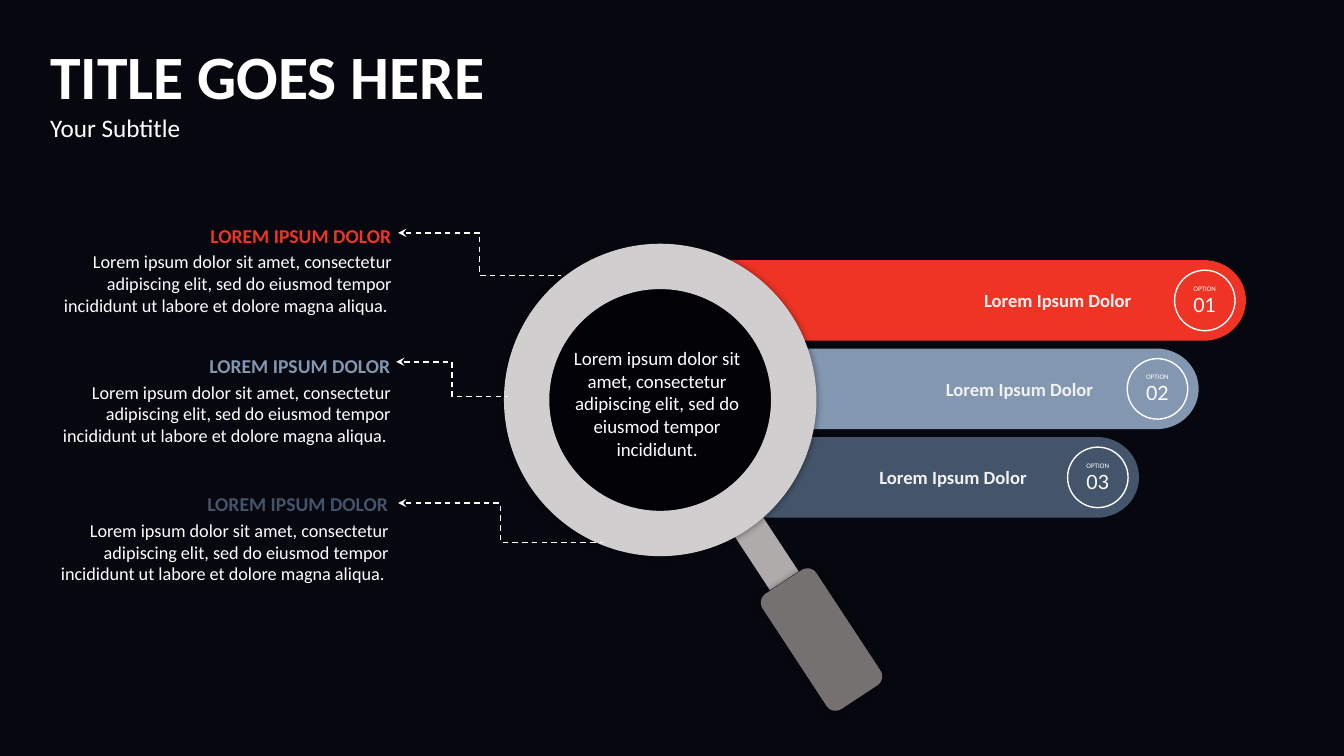
import math
from dataclasses import dataclass

from lxml import etree
from pptx import Presentation
from pptx.dml.color import RGBColor
from pptx.enum.dml import MSO_LINE
from pptx.enum.shapes import MSO_CONNECTOR, MSO_SHAPE
from pptx.enum.text import MSO_ANCHOR, MSO_AUTO_SIZE, PP_ALIGN
from pptx.oxml import parse_xml
from pptx.oxml.ns import nsdecls, qn
from pptx.util import Pt

LEFT, CENTER, RIGHT = PP_ALIGN.LEFT, PP_ALIGN.CENTER, PP_ALIGN.RIGHT
MIDDLE = MSO_ANCHOR.MIDDLE
GROW = MSO_AUTO_SIZE.SHAPE_TO_FIT_TEXT
ELBOW = MSO_CONNECTOR.ELBOW
DASH = MSO_LINE.DASH
OVAL, DONUT = MSO_SHAPE.OVAL, MSO_SHAPE.DONUT
RECTANGLE, ROUNDED = MSO_SHAPE.RECTANGLE, MSO_SHAPE.ROUNDED_RECTANGLE


@dataclass(frozen=True)
class Theme:
    background: str = "07080F"
    white: str = "FFFFFF"
    label: str = "F2F2F2"
    black: str = "000000"
    red: str = "EF3425"
    blue: str = "8397B1"
    navy: str = "44546B"
    ring: str = "D0CECE"
    neck: str = "AFABAB"
    handle: str = "767171"
    font: str = "Calibri"
    number_font: str = "Lato"
    title_size: float = 44
    subtitle_size: float = 18
    heading_size: float = 14
    body_size: float = 13
    lens_size: float = 13.5
    label_size: float = 13.3
    option_size: float = 5
    number_size: float = 14


THEME = Theme()
LENS_X, LENS_Y = 471.6, 285.7
RING_RADIUS, HOLE_RADIUS = 111.6, 79.2
HIDDEN_RADIUS = 104
BAR_TOP, BAR_HEIGHT, BAR_PITCH = 185.8, 57.6, 63.2
CAP_WIDTH = 30
BADGE_SIZE = 43.2
HANDLE_ANGLE = 326.7

BODY = ("Lorem ipsum dolor sit amet, consectetur adipiscing elit, "
        "sed do eiusmod tempor incididunt ut labore et dolore magna aliqua. ")
LENS_TEXT = ("Lorem ipsum dolor sit amet, consectetur adipiscing elit, "
             "sed do eiusmod tempor incididunt.")
# colour, right edge, label left
BARS = [
    (THEME.red, 890, 699.8),
    (THEME.blue, 856.2, 672.5),
    (THEME.navy, 813.6, 625),
]
# colour, text left and top, connector start and end
NOTES = [
    (THEME.red, (14.4, 156.2), (284.4, 166.3), (401, 196.6)),
    (THEME.blue, (13.7, 249.1), (283, 258.5), (362.9, 283.4)),
    (THEME.navy, (12.2, 347.8), (284.4, 359.3), (430.6, 387.4)),
]


def text_format(size, color=THEME.white, bold=False, font=THEME.font):
    return {"size": Pt(size), "bold": bold, "name": font, "color": color}


def write(frame, lines, align, space_before=0):
    """Fill a text frame with (text, format) lines, one paragraph each."""
    for index, (text, values) in enumerate(lines):
        paragraph = frame.add_paragraph() if index else frame.paragraphs[0]
        paragraph.alignment = align
        if index and space_before:
            paragraph.space_before = Pt(space_before)
        run = paragraph.add_run()
        run.text = text
        for name, value in values.items():
            if name == "color":
                run.font.color.rgb = RGBColor.from_string(value)
            else:
                setattr(run.font, name, value)


def set_margins(frame, margin):
    for side in ("left", "top", "right", "bottom"):
        setattr(frame, f"margin_{side}", Pt(margin))


def add_text(slide, box, lines, align=LEFT, space_before=0):
    shape = slide.shapes.add_textbox(*map(Pt, box))
    shape.text_frame.word_wrap = True
    shape.text_frame.auto_size = GROW
    write(shape.text_frame, lines, align, space_before)
    return shape


def paint(shape, color):
    shape.shadow.inherit = False
    shape.fill.solid()
    shape.fill.fore_color.rgb = RGBColor.from_string(color)
    shape.line.fill.background()


def add_filled(slide, kind, box, color, rotation=0):
    shape = slide.shapes.add_shape(kind, *map(Pt, box))
    paint(shape, color)
    shape.rotation = rotation
    return shape


def add_glow_shadow(shape):
    effects = shape._element.spPr.find(qn("a:effectLst"))
    effects.append(parse_xml(
        f'<a:outerShdw {nsdecls("a")} blurRad="{Pt(5)}" dist="0" dir="0">'
        f'<a:srgbClr val="{THEME.black}"><a:alpha val="40000"/></a:srgbClr>'
        '</a:outerShdw>'))


def circle_box(radius):
    return LENS_X - radius, LENS_Y - radius, 2 * radius, 2 * radius


def bar_outline(top, right):
    """Rounded right end; the left end follows the lens behind its ring."""
    middle, half = top + BAR_HEIGHT / 2, BAR_HEIGHT / 2
    cap = [(right - CAP_WIDTH + CAP_WIDTH * math.cos(math.radians(angle)),
            middle + half * math.sin(math.radians(angle)))
           for angle in range(-90, 91, 5)]
    edge = []
    for step in range(9):
        y = top + BAR_HEIGHT * (1 - step / 8)
        edge.append((LENS_X + math.sqrt(HIDDEN_RADIUS ** 2 - (y - LENS_Y) ** 2), y))
    return [(Pt(x), Pt(y)) for x, y in cap + edge]


def add_badge(slide, left, top, number):
    badge = slide.shapes.add_shape(OVAL, *map(Pt, (left, top, BADGE_SIZE, BADGE_SIZE)))
    badge.shadow.inherit = False
    badge.fill.background()
    badge.line.color.rgb = RGBColor.from_string(THEME.white)
    badge.line.width = Pt(1)
    frame = badge.text_frame
    frame.word_wrap = False
    frame.vertical_anchor = MIDDLE
    set_margins(frame, 0)
    write(frame, [
        ("OPTION", text_format(THEME.option_size)),
        (number, text_format(THEME.number_size, font=THEME.number_font)),
    ], CENTER)


def add_bar(slide, index, color, right, label_left):
    top = BAR_TOP + index * BAR_PITCH
    start, *rest = bar_outline(top, right)
    builder = slide.shapes.build_freeform(*start)
    builder.add_line_segments(rest, close=True)
    paint(builder.convert_to_shape(), color)
    add_badge(slide, right - 51, top + 7.2, f"{index + 1:02}")
    label = add_text(slide, (label_left, top + 20.7, 111.6, 16), [
        ("Lorem Ipsum Dolor", text_format(THEME.label_size, THEME.label, True)),
    ], CENTER)
    label.text_frame.word_wrap = False
    set_margins(label.text_frame, 0)


def add_magnifier(slide):
    add_filled(slide, RECTANGLE, (534.2, 368.6, 24.5, 50.4), THEME.neck, HANDLE_ANGLE)
    handle = add_filled(slide, ROUNDED, (563.8, 407.5, 46.1, 98.6),
                        THEME.handle, HANDLE_ANGLE)
    add_glow_shadow(handle)
    glass = add_filled(slide, OVAL, circle_box(82.8), THEME.black)
    color = glass.fill._xPr.find(qn("a:solidFill"))[0]
    etree.SubElement(color, qn("a:alpha"), val="50000")
    ring = add_filled(slide, DONUT, circle_box(RING_RADIUS), THEME.ring)
    ring.adjustments[0] = (RING_RADIUS - HOLE_RADIUS) / (2 * RING_RADIUS)
    add_glow_shadow(ring)
    add_text(slide, (401, 244.1, 136.8, 89.3),
             [(LENS_TEXT, text_format(THEME.lens_size))], CENTER)


def add_note(slide, color, corner, start, end):
    add_text(slide, (*corner, 272.2, 74.9), [
        ("LOREM IPSUM DOLOR", text_format(THEME.heading_size, color, True)),
        (BODY, text_format(THEME.body_size)),
    ], RIGHT, space_before=2.6)
    connector = slide.shapes.add_connector(ELBOW, *map(Pt, (*start, *end)))
    connector.line.color.rgb = RGBColor.from_string(THEME.white)
    connector.line.width = Pt(1)
    connector.line.dash_style = DASH
    etree.SubElement(connector.line._get_or_add_ln(), qn("a:headEnd"), type="stealth")
    etree.SubElement(connector._element.spPr, qn("a:effectLst"))


def main():
    presentation = Presentation()
    presentation.slide_width, presentation.slide_height = Pt(960), Pt(540)
    slide = presentation.slides.add_slide(presentation.slide_layouts[6])
    slide.background.fill.solid()
    slide.background.fill.fore_color.rgb = RGBColor.from_string(THEME.background)
    add_text(slide, (28.8, 23.8, 468, 82), [
        ("TITLE GOES HERE", text_format(THEME.title_size, bold=True)),
        ("Your Subtitle", text_format(THEME.subtitle_size)),
    ])
    for index, bar in enumerate(BARS):
        add_bar(slide, index, *bar)
    add_magnifier(slide)
    for note in NOTES:
        add_note(slide, *note)
    presentation.save("out.pptx")


if __name__ == "__main__":
    main()
